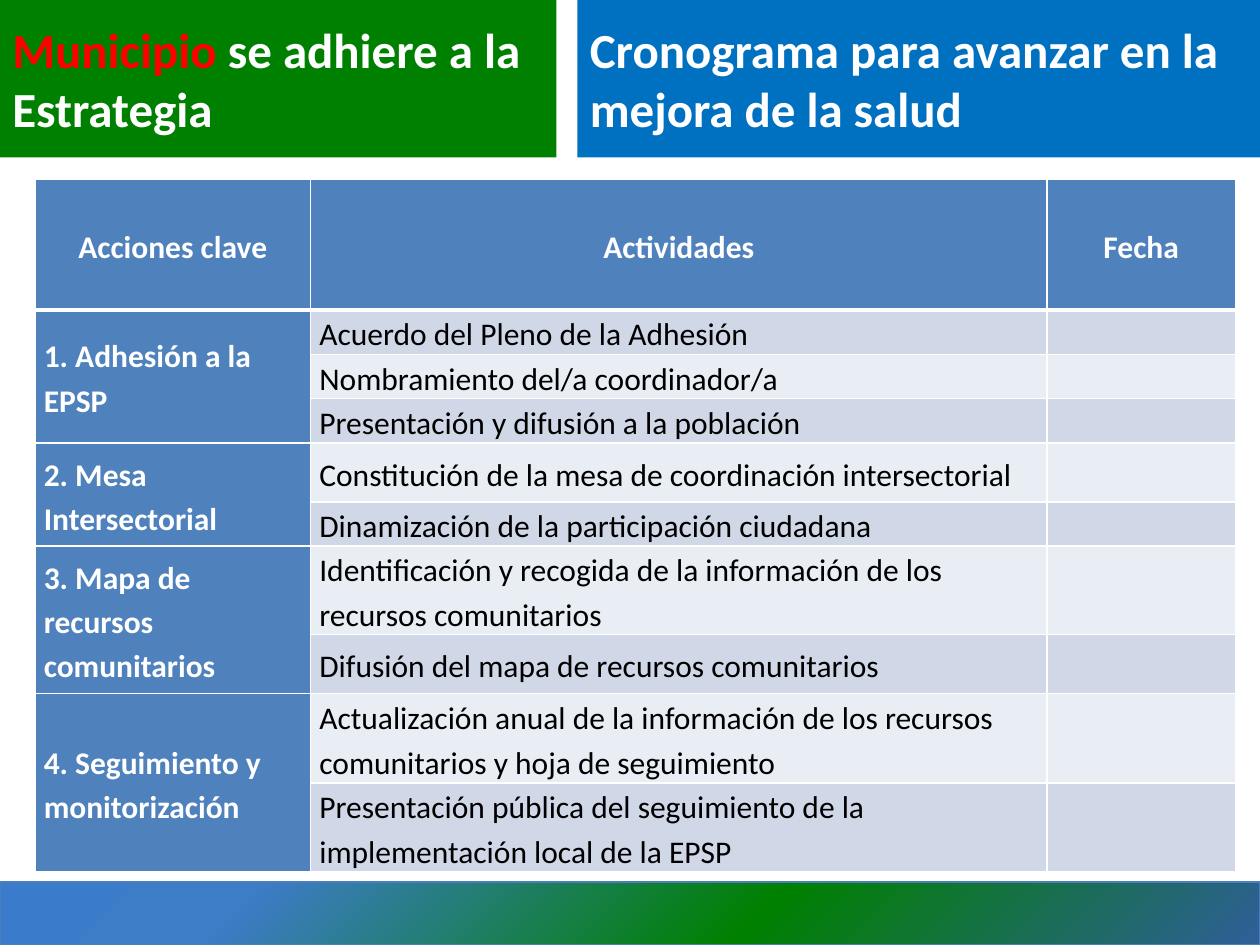
from lxml import etree
from pptx import Presentation
from pptx.dml.color import RGBColor
from pptx.enum.shapes import MSO_SHAPE
from pptx.enum.text import MSO_ANCHOR, PP_ALIGN
from pptx.util import Pt

RECT = MSO_SHAPE.RECTANGLE
MIDDLE = MSO_ANCHOR.MIDDLE
LEFT, CENTER = PP_ALIGN.LEFT, PP_ALIGN.CENTER

WHITE = RGBColor(0xFF, 0xFF, 0xFF)
BLACK = RGBColor(0x00, 0x00, 0x00)
RED = RGBColor(0xFF, 0x00, 0x00)
GREEN = RGBColor(0x00, 0x80, 0x00)
BLUE = RGBColor(0x00, 0x70, 0xC0)
HEAD_BLUE = RGBColor(0x4F, 0x81, 0xBD)
BAND_LINE = RGBColor(0x4B, 0x7E, 0xBC)
ROW_FILLS = [RGBColor(0xD0, 0xD8, 0xE8), RGBColor(0xE9, 0xED, 0xF4)]
GRADIENT = [(0, RGBColor(0x2F, 0x5F, 0x99)), (40, GREEN),
            (80, RGBColor(0x3D, 0x7C, 0xC7)), (100, RGBColor(0x3A, 0x7C, 0xCB))]

FONT = "Calibri"
A_NS = "http://schemas.openxmlformats.org/drawingml/2006/main"

# Content: titles as (left, width, fill, runs)
TITLES = [
    (0, 318, GREEN, [("Municipio ", RED), ("se adhiere a la Estrategia", WHITE)]),
    (330, 390, BLUE, [("Cronograma para avanzar en la mejora de la salud", WHITE)]),
]
HEADERS = ["Acciones clave", "Actividades", "Fecha"]
# Key actions with their activities and row heights
ACTIONS = [
    ("1. Adhesión a la EPSP", [
        ("Acuerdo del Pleno de la Adhesión", 25.2),
        ("Nombramiento del/a coordinador/a", 25.2),
        ("Presentación y difusión a la población", 25.2)]),
    ("2. Mesa Intersectorial", [
        ("Constitución de la mesa de coordinación intersectorial", 33.8),
        ("Dinamización de la participación ciudadana", 25.2)]),
    ("3. Mapa de recursos comunitarios", [
        ("Identificación y recogida de la información de los recursos comunitarios", 50.4),
        ("Difusión del mapa de recursos comunitarios", 33.8)]),
    ("4. Seguimiento y monitorización", [
        ("Actualización anual de la información de los recursos comunitarios "
         "y hoja de seguimiento", 51),
        ("Presentación pública del seguimiento de la implementación local de la EPSP", 50.4)]),
]
HEADER_HEIGHT = 75
COL_WIDTHS = [157.5, 420.8, 107.7]
TABLE_LEFT, TABLE_TOP = 20, 102.2


def add_run(p, text, size, color, bold):
    r = p.add_run()
    r.text = text
    r.font.name, r.font.size, r.font.bold = FONT, Pt(size), bold
    r.font.color.rgb = color


def add_rect(s, left, top, width, height):
    sp = s.shapes.add_shape(RECT, Pt(left), Pt(top), Pt(width), Pt(height))
    sp.shadow.inherit = False
    return sp


def set_borders(cell, bottom):
    tc_pr = cell._tc.get_or_add_tcPr()
    for i, (side, width) in enumerate([("L", 1), ("R", 1), ("T", 1), ("B", bottom)]):
        tc_pr.insert(i, etree.fromstring(
            f'<a:ln{side} xmlns:a="{A_NS}" w="{Pt(width)}"><a:solidFill>'
            f'<a:srgbClr val="{WHITE}"/></a:solidFill></a:ln{side}>'))


def style_cell(cell, fill, text="", color=WHITE, bold=True, align=LEFT, bottom=1):
    cell.fill.solid()
    cell.fill.fore_color.rgb = fill
    set_borders(cell, bottom)
    cell.vertical_anchor = MIDDLE
    cell.margin_left = cell.margin_right = Pt(5)
    cell.margin_top = cell.margin_bottom = Pt(0)
    if text:
        p = cell.text_frame.paragraphs[0]
        p.alignment, p.line_spacing = align, 1.15
        add_run(p, text, 18, color, bold)


prs = Presentation()
prs.slide_width, prs.slide_height = Pt(720), Pt(540)
s = prs.slides.add_slide(prs.slide_layouts[6])

# Bottom band with a gradient spreading from the lower right corner
band = add_rect(s, 0, 504, 720, 36)
band.line.color.rgb = BAND_LINE
band.line.width = Pt(0.75)
stops = "".join(f'<a:gs pos="{pos * 1000}"><a:srgbClr val="{color}"/></a:gs>'
                for pos, color in GRADIENT)
band._element.spPr.insert(2, etree.fromstring(
    f'<a:gradFill xmlns:a="{A_NS}" rotWithShape="1"><a:gsLst>{stops}</a:gsLst>'
    '<a:path path="circle"><a:fillToRect l="100000" t="100000"/></a:path></a:gradFill>'))

# Schedule table
activities = [a for _, group in ACTIONS for a in group]
heights = [HEADER_HEIGHT] + [h for _, h in activities]
table = s.shapes.add_table(len(heights), len(COL_WIDTHS), Pt(TABLE_LEFT), Pt(TABLE_TOP),
                           Pt(sum(COL_WIDTHS)), Pt(sum(heights))).table
for col, width in zip(table.columns, COL_WIDTHS):
    col.width = Pt(width)
for row, height in zip(table.rows, heights):
    row.height = Pt(height)

for c, header in enumerate(HEADERS):
    style_cell(table.cell(0, c), HEAD_BLUE, header, align=CENTER, bottom=3)
for i, (activity, _) in enumerate(activities):
    fill = ROW_FILLS[i % 2]
    style_cell(table.cell(i + 1, 1), fill, activity, BLACK, False)
    style_cell(table.cell(i + 1, 2), fill)

first = 1
for action, group in ACTIONS:
    last = first + len(group) - 1
    for r in range(first, last + 1):
        style_cell(table.cell(r, 0), HEAD_BLUE, action if r == first else "")
    table.cell(first, 0).merge(table.cell(last, 0))
    first = last + 1

# Title boxes
for left, width, fill, runs in TITLES:
    sp = add_rect(s, left, 0, width, 90)
    sp.fill.solid()
    sp.fill.fore_color.rgb = fill
    sp.line.fill.background()
    tf = sp.text_frame
    tf.word_wrap = True
    tf.vertical_anchor = MIDDLE
    p = tf.paragraphs[0]
    p.alignment = LEFT
    for text, color in runs:
        add_run(p, text, 28, color, True)

prs.save("out.pptx")
